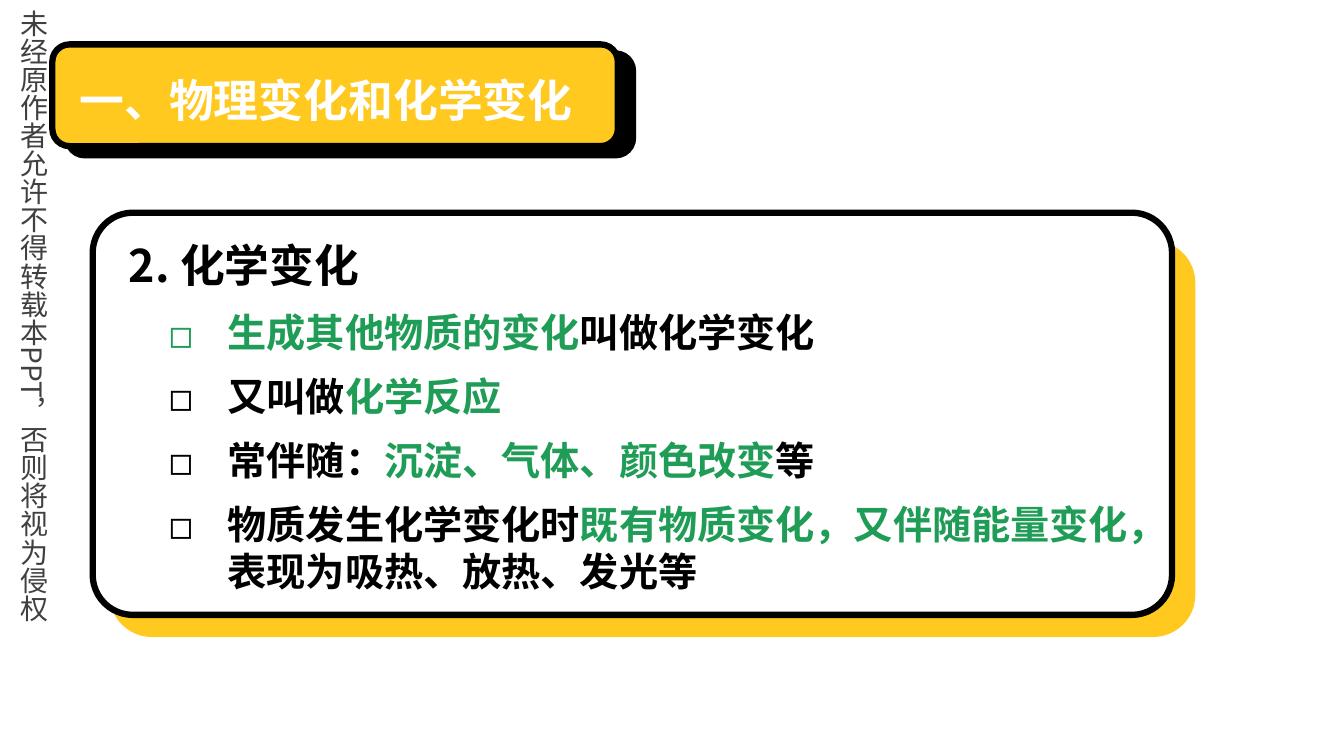
from dataclasses import dataclass

from lxml.etree import SubElement
from pptx import Presentation
from pptx.dml.color import RGBColor
from pptx.enum.shapes import MSO_SHAPE
from pptx.oxml.ns import qn
from pptx.slide import Slide
from pptx.text.text import TextFrame
from pptx.util import Pt

FONT = "Noto Sans CJK SC"
BLACK = RGBColor(0x00, 0x00, 0x00)
WHITE = RGBColor(0xFF, 0xFF, 0xFF)
YELLOW = RGBColor(0xFF, 0xC9, 0x1F)
GREEN = RGBColor(0x1F, 0x9C, 0x56)
GREY = RGBColor(0x40, 0x40, 0x40)


@dataclass(frozen=True)
class Card:
    left: float
    top: float
    width: float
    height: float
    fill: RGBColor
    line: RGBColor
    corner: float


@dataclass(frozen=True)
class Span:
    text: str
    color: RGBColor = BLACK


CARDS = [
    Card(48.2, 38.2, 404, 72.7, BLACK, BLACK, 0.17),
    Card(37.4, 31.7, 404, 72.7, YELLOW, BLACK, 0.17),
    Card(80.6, 174.2, 771, 278.6, YELLOW, YELLOW, 0.1),
    Card(66.2, 151.9, 771, 287.3, WHITE, BLACK, 0.1),
]

POINTS = [
    [Span("生成其他物质的变化", GREEN), Span("叫做化学变化")],
    [Span("又叫做"), Span("化学反应", GREEN)],
    [Span("常伴随："), Span("沉淀、气体、颜色改变", GREEN), Span("等")],
    [
        Span("物质发生化学变化时"),
        Span("既有物质变化，又伴随能量变化，", GREEN),
        Span("表现为吸热、放热、发光等"),
    ],
]


def add_card(page: Slide, card: Card) -> None:
    shape = page.shapes.add_shape(
        MSO_SHAPE.ROUNDED_RECTANGLE,
        Pt(card.left), Pt(card.top), Pt(card.width), Pt(card.height),
    )
    shape.shadow.inherit = False
    shape.adjustments[0] = card.corner
    shape.fill.solid()
    shape.fill.fore_color.rgb = card.fill
    shape.line.color.rgb = card.line
    shape.line.width = Pt(4.5)


def add_frame(page: Slide, left: float, top: float, width: float,
              height: float, inset_top: float = 6.6) -> TextFrame:
    box = page.shapes.add_textbox(Pt(left), Pt(top), Pt(width), Pt(height))
    frame = box.text_frame
    frame.word_wrap = True
    frame.margin_top = Pt(inset_top)
    return frame


def write(frame: TextFrame, spans: list[Span], *, size: float,
          spacing: float, bold: bool = True, bullet: str = "") -> None:
    """Fill the empty first paragraph, or append one after it."""
    para = frame.paragraphs[0]
    if para.runs:
        para = frame.add_paragraph()
    para.line_spacing = Pt(spacing)
    if bullet:
        para.space_before = Pt(12)
        properties = para._p.get_or_add_pPr()
        properties.set("marL", str(Pt(70.5)))
        properties.set("indent", str(-Pt(42)))
        SubElement(properties, qn("a:buFont"), typeface=FONT)
        SubElement(properties, qn("a:buChar"), char=bullet)
    for span in spans:
        run = para.add_run()
        run.text = span.text
        run.font.size = Pt(size)
        run.font.bold = bold
        run.font.color.rgb = span.color
        run.font.name = FONT
        SubElement(run._r.get_or_add_rPr(), qn("a:ea"), typeface=FONT)


def main() -> None:
    deck = Presentation()
    deck.slide_width, deck.slide_height = Pt(960), Pt(540)
    page = deck.slides.add_slide(deck.slide_layouts[6])

    notice = add_frame(page, 0, 0, 51.1, 530, inset_top=3.6)
    notice._txBody.bodyPr.set("vert", "eaVert")
    write(notice, [Span("未经原作者允许不得转载本PPT，否则将视为侵权", GREY)],
          size=20, spacing=36, bold=False)

    for card in CARDS:
        add_card(page, card)

    title = add_frame(page, 49.7, 45.4, 373.7, 46)
    write(title, [Span("一、物理变化和化学变化", WHITE)], size=32, spacing=38.4)

    body = add_frame(page, 85, 163.4, 733.7, 322.6)
    write(body, [Span("2. 化学变化")], size=32, spacing=38.4)
    for point in POINTS:
        write(body, point, size=28, spacing=33.6, bullet="◻")

    deck.save("out.pptx")


if __name__ == "__main__":
    main()
